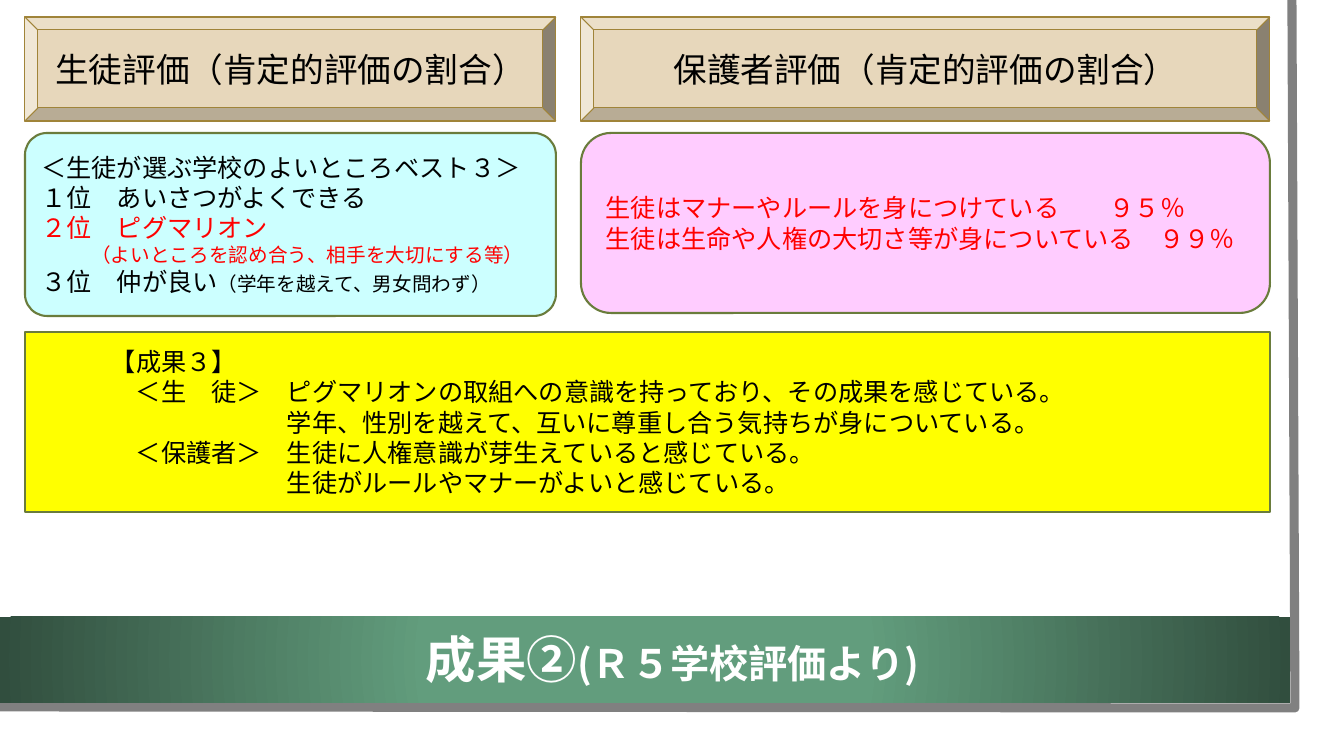
from lxml import etree
from pptx import Presentation
from pptx.dml.color import RGBColor
from pptx.enum.shapes import MSO_SHAPE
from pptx.enum.text import MSO_ANCHOR, PP_ALIGN
from pptx.oxml.ns import qn
from pptx.util import Emu, Pt

RECT = MSO_SHAPE.RECTANGLE
ROUNDED = MSO_SHAPE.ROUNDED_RECTANGLE
BEVEL = MSO_SHAPE.BEVEL
LEFT, CENTER = PP_ALIGN.LEFT, PP_ALIGN.CENTER
TOP, MIDDLE = MSO_ANCHOR.TOP, MSO_ANCHOR.MIDDLE

FONT = "Noto Sans CJK JP"
BLACK, WHITE, RED = "000000", "FFFFFF", "FF0000"
TAN, BRONZE, OLIVE = "E7D7BB", "A08439", "6A7C3C"
EMU_PER_PX = 914400 / 100.8

# Columns shared by the headings and the boxes below them
STUDENT_X, STUDENT_W = 25, 531
PARENT_X, PARENT_W = 581, 689


def px(length):
    return Emu(round(length * EMU_PER_PX))


def rgb(code):
    return RGBColor.from_string(code)


def add_box(page, kind, place, fill, line=None, line_width=1.5):
    box = page.shapes.add_shape(kind, *map(px, place))
    box.shadow.inherit = False
    if fill:
        box.fill.solid()
        box.fill.fore_color.rgb = rgb(fill)
    if line:
        box.line.color.rgb = rgb(line)
        box.line.width = Pt(line_width)
    else:
        box.line.fill.background()
    return box


def prepare_text(box, anchor=MIDDLE):
    frame = box.text_frame
    frame.word_wrap = True
    frame.vertical_anchor = anchor
    return frame


def add_para(frame, spans, size=18, color=BLACK, align=LEFT, bold=False,
             margin=0, indent=0, tab=None):
    """Add a paragraph; spans are (text, own size or None) pairs."""
    para = frame.paragraphs[0]
    if para.runs:
        para = frame.add_paragraph()
    para.alignment = align
    props = para._p.get_or_add_pPr()
    props.set("marL", str(px(margin)))
    props.set("indent", str(px(indent)))
    if tab:
        stops = etree.SubElement(props, qn("a:tabLst"))
        etree.SubElement(stops, qn("a:tab"), pos=str(px(tab)), algn="l")
    font = para.font
    font.size, font.bold, font.name = Pt(size), bold, FONT
    font.color.rgb = rgb(color)
    etree.SubElement(props.find(qn("a:defRPr")), qn("a:ea"), typeface=FONT)
    for text, own_size in spans:
        span = para.add_run()
        span.text = text
        if own_size:
            span.font.size = Pt(own_size)


def add_page_edge(page):
    builder = page.shapes.build_freeform(px(1292), 0)
    builder.add_line_segments([(px(1295), px(708)), (0, px(707))], close=False)
    edge = builder.convert_to_shape()
    edge.shadow.inherit = False
    edge.fill.background()
    edge.line.color.rgb = rgb("808080")
    edge.line.width = Pt(6.5)


def add_title_band(page):
    band = add_box(page, RECT, (0, 617, 1290, 86), None)
    band.fill.gradient()
    stops = band.fill.gradient_stops
    for stop, position, color in zip(stops, (0.34, 1), ("629D7D", "314E3E")):
        stop.position = position
        stop.color.rgb = rgb(color)
    gradient = band._element.spPr.find(qn("a:gradFill"))
    gradient.remove(gradient.find(qn("a:lin")))
    circle = etree.SubElement(gradient, qn("a:path"), path="circle")
    etree.SubElement(circle, qn("a:fillToRect"),
                     {side: "50000" for side in "ltrb"})


def add_heading(page, left, width, text):
    box = add_box(page, BEVEL, (left, 17, width, 104), TAN, BRONZE, 0.75)
    add_para(prepare_text(box), [(text, None)], size=24, align=CENTER)


def add_student_ranking(page):
    box = add_box(page, ROUNDED, (STUDENT_X, 133, STUDENT_W, 183),
                  "CCFFFF", OLIVE)
    box.adjustments[0] = 0.12
    frame = prepare_text(box)
    add_para(frame, [("＜生徒が選ぶ学校のよいところベスト３＞", None)])
    add_para(frame, [("１位　あいさつがよくできる", None)])
    add_para(frame, [("２位　ピグマリオン", None)], color=RED)
    add_para(frame, [("（よいところを認め合う、相手を大切にする等）", None)],
             size=14, color=RED, margin=50)
    add_para(frame, [("３位　仲が良い", None),
                     ("（学年を越えて、男女問わず）", 14)])


def add_parent_ratings(page):
    box = add_box(page, ROUNDED, (PARENT_X, 133, PARENT_W, 180),
                  "FFCCFF", OLIVE)
    frame = prepare_text(box)
    frame.margin_left = px(16)
    add_para(frame, [("生徒はマナーやルールを身につけている\t９５％", None)],
             color=RED, tab=512)
    add_para(frame, [("生徒は生命や人権の大切さ等が身についている　９９％", None)],
             color=RED)


def add_results(page):
    box = add_box(page, RECT, (25, 332, 1245, 180), "FFFF00", OLIVE)
    frame = prepare_text(box)
    add_para(frame, [("【成果３】", None)], margin=76)
    findings = [
        ("＜生　徒＞", "ピグマリオンの取組への意識を持っており、その成果を感じている。"),
        ("", "学年、性別を越えて、互いに尊重し合う気持ちが身についている。"),
        ("＜保護者＞", "生徒に人権意識が芽生えていると感じている。"),
        ("", "生徒がルールやマナーがよいと感じている。"),
    ]
    for group, finding in findings:
        text = f"{group}\t{finding}" if group else finding
        add_para(frame, [(text, None)], margin=252,
                 indent=-151 if group else 0)


def add_title(page):
    box = page.shapes.add_textbox(*map(px, (378, 623, 589, 72)))
    add_para(prepare_text(box, TOP), [("成果②", 36), ("(Ｒ５学校評価より)", 28)],
             size=36, color=WHITE, align=CENTER, bold=True)


def main():
    deck = Presentation()
    deck.slide_width, deck.slide_height = px(1344), px(756)
    page = deck.slides.add_slide(deck.slide_layouts[6])

    # Frame and band
    add_page_edge(page)
    add_title_band(page)

    # Headings
    add_heading(page, STUDENT_X, STUDENT_W, "生徒評価（肯定的評価の割合）")
    add_heading(page, PARENT_X, PARENT_W, "保護者評価（肯定的評価の割合）")

    # Findings and title
    add_student_ranking(page)
    add_parent_ratings(page)
    add_results(page)
    add_title(page)

    deck.save("out.pptx")


if __name__ == "__main__":
    main()
